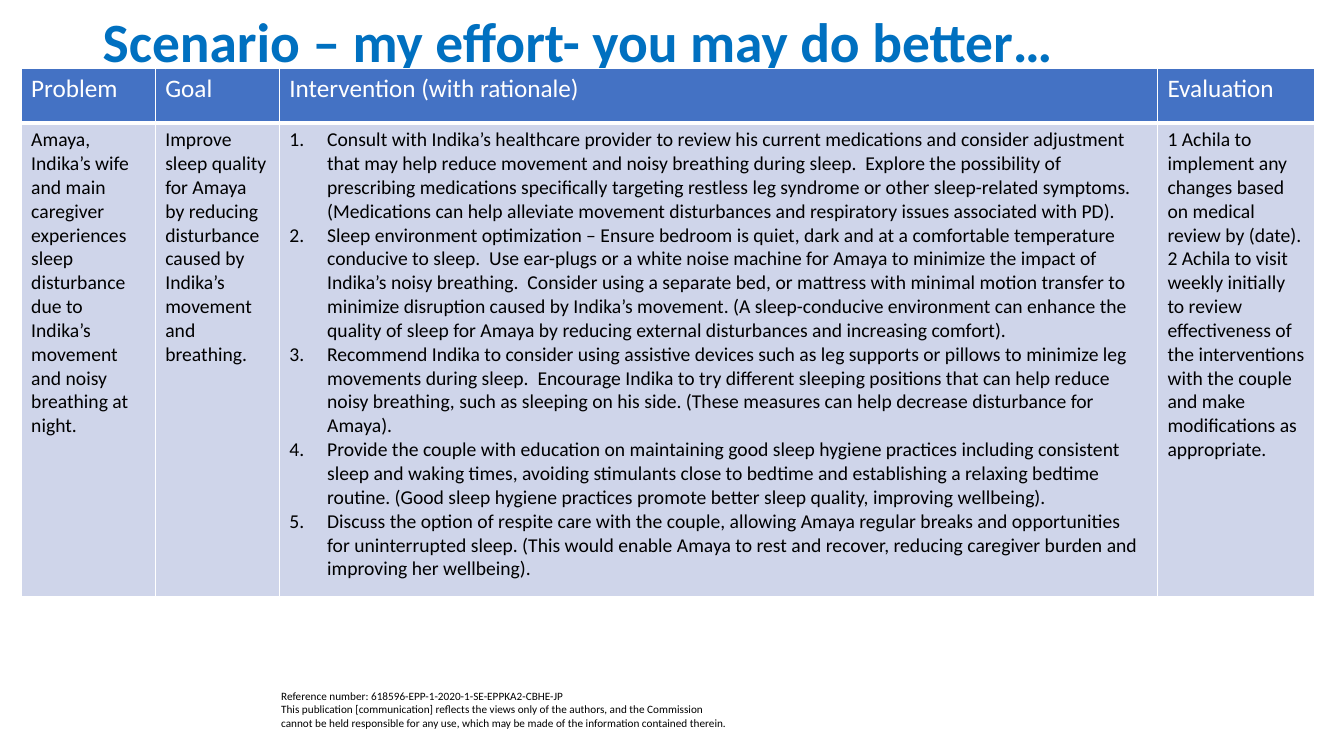
from dataclasses import dataclass

from lxml import etree
from pptx import Presentation
from pptx import util as u
from pptx.dml.color import RGBColor
from pptx.enum import text
from pptx.oxml import ns


@dataclass(frozen=True)
class Theme:
    font: str = "Calibri"
    title: str = "0070C0"
    header_fill: str = "4472C4"
    body_fill: str = "CFD5EA"
    light: str = "FFFFFF"
    dark: str = "000000"
    title_size: float = 39.6
    header_size: float = 18
    body_size: float = 14
    reference_size: float = 8


@dataclass(frozen=True)
class CareColumn:
    heading: str
    width: float
    entries: tuple[str, ...]
    numbered: bool = False


@dataclass(frozen=True)
class TextStyle:
    size: float
    color: str
    bold: bool = False


THEME = Theme()
TITLE_STYLE = TextStyle(THEME.title_size, THEME.title, bold=True)
HEADER_STYLE = TextStyle(THEME.header_size, THEME.light)
BODY_STYLE = TextStyle(THEME.body_size, THEME.dark)
REFERENCE_STYLE = TextStyle(THEME.reference_size, THEME.dark)

HEADER_HEIGHT, BODY_HEIGHT = 0.54, 4.7
NUMBER_INDENT = 0.375

CARE_PLAN = (
    CareColumn("Problem", 1.33, (
        "Amaya, Indika’s wife and main caregiver experiences sleep disturbance due to "
        "Indika’s movement and noisy breathing at night.",
    )),
    CareColumn("Goal", 1.23, (
        "Improve sleep quality for Amaya by reducing disturbance caused by Indika’s "
        "movement and breathing.",
    )),
    CareColumn("Intervention (with rationale)", 8.71, (
        "Consult with Indika’s healthcare provider to review his current medications and "
        "consider adjustment that may help reduce movement and noisy breathing during sleep.  "
        "Explore the possibility of prescribing medications specifically targeting restless "
        "leg syndrome or other sleep-related symptoms. (Medications can help alleviate "
        "movement disturbances and respiratory issues associated with PD).",
        "Sleep environment optimization – Ensure bedroom is quiet, dark and at a comfortable "
        "temperature conducive to sleep.  Use ear-plugs or a white noise machine for Amaya to "
        "minimize the impact of Indika’s noisy breathing.  Consider using a separate bed, or "
        "mattress with minimal motion transfer to minimize disruption caused by Indika’s "
        "movement. (A sleep-conducive environment can enhance the quality of sleep for Amaya "
        "by reducing external disturbances and increasing comfort).",
        "Recommend Indika to consider using assistive devices such as leg supports or pillows "
        "to minimize leg movements during sleep.  Encourage Indika to try different sleeping "
        "positions that can help reduce noisy breathing, such as sleeping on his side. (These "
        "measures can help decrease disturbance for Amaya).",
        "Provide the couple with education on maintaining good sleep hygiene practices "
        "including consistent sleep and waking times, avoiding stimulants close to bedtime "
        "and establishing a relaxing bedtime routine. (Good sleep hygiene practices promote "
        "better sleep quality, improving wellbeing).",
        "Discuss the option of respite care with the couple, allowing Amaya regular breaks and "
        "opportunities for uninterrupted sleep. (This would enable Amaya to rest and recover, "
        "reducing caregiver burden and improving her wellbeing).",
    ), numbered=True),
    CareColumn("Evaluation", 1.56, (
        "1 Achila to implement any changes based on medical review by (date).",
        "2 Achila to visit weekly initially to review effectiveness of the interventions "
        "with the couple and make modifications as appropriate.",
    )),
)

REFERENCE_LINES = (
    "Reference number: 618596-EPP-1-2020-1-SE-EPPKA2-CBHE-JP",
    "This publication [communication] reflects the views only of the authors, and the "
    "Commission cannot be held responsible for any use, which may be made of the "
    "information contained therein.",
)


def add_run(paragraph, wording: str, style: TextStyle) -> None:
    run = paragraph.add_run()
    run.text = wording
    run.font.name = THEME.font
    run.font.size = u.Pt(style.size)
    run.font.bold = style.bold
    run.font.color.rgb = RGBColor.from_string(style.color)


def add_text_frame(slide, left: float, top: float, width: float, height: float):
    frame = slide.shapes.add_textbox(*map(u.Inches, (left, top, width, height))).text_frame
    frame.word_wrap = True
    return frame


def number_paragraph(paragraph) -> None:
    """Give the paragraph automatic numbering with a hanging indent."""
    properties = paragraph._p.get_or_add_pPr()
    properties.set("marL", str(u.Inches(NUMBER_INDENT)))
    properties.set("indent", str(-u.Inches(NUMBER_INDENT)))
    etree.SubElement(properties, ns.qn("a:buFont"), typeface="+mj-lt")
    etree.SubElement(properties, ns.qn("a:buAutoNum"), type="arabicPeriod")


def add_borders(cell, bottom_points: float) -> None:
    properties = cell._tc.get_or_add_tcPr()
    for position, side in enumerate(("lnL", "lnR", "lnT", "lnB")):
        points = bottom_points if side == "lnB" else 1
        border = etree.Element(ns.qn(f"a:{side}"), w=str(u.Pt(points)))
        fill = etree.SubElement(border, ns.qn("a:solidFill"))
        etree.SubElement(fill, ns.qn("a:srgbClr"), val=THEME.light)
        properties.insert(position, border)


def fill_cell(cell, entries: tuple[str, ...], style: TextStyle, fill: str,
              numbered: bool = False, bottom_points: float = 1) -> None:
    cell.fill.solid()
    cell.fill.fore_color.rgb = RGBColor.from_string(fill)
    add_borders(cell, bottom_points)
    frame = cell.text_frame
    for index, entry in enumerate(entries):
        paragraph = frame.add_paragraph() if index else frame.paragraphs[0]
        if numbered:
            number_paragraph(paragraph)
        add_run(paragraph, entry, style)


def add_reference(slide) -> None:
    paragraph = add_text_frame(slide, 2.69, 6.79, 4.64, 0.5).paragraphs[0]
    for index, line in enumerate(REFERENCE_LINES):
        if index:
            paragraph.add_line_break()
        add_run(paragraph, line, REFERENCE_STYLE)


def add_title(slide) -> None:
    frame = add_text_frame(slide, 0.92, 0.19, 11.5, 0.5)
    frame.vertical_anchor = text.MSO_ANCHOR.MIDDLE
    heading = frame.paragraphs[0]
    heading.line_spacing = 0.9
    add_run(heading, "Scenario – my effort- you may do better…", TITLE_STYLE)


def add_care_plan(slide) -> None:
    total_width = sum(column.width for column in CARE_PLAN)
    plan = slide.shapes.add_table(
        2, len(CARE_PLAN), u.Inches(0.21), u.Inches(0.68),
        u.Inches(total_width), u.Inches(HEADER_HEIGHT + BODY_HEIGHT)).table
    for row, height in zip(plan.rows, (HEADER_HEIGHT, BODY_HEIGHT)):
        row.height = u.Inches(height)
    for index, column in enumerate(CARE_PLAN):
        plan.columns[index].width = u.Inches(column.width)
        fill_cell(plan.cell(0, index), (column.heading,), HEADER_STYLE,
                  THEME.header_fill, bottom_points=3)
        fill_cell(plan.cell(1, index), column.entries, BODY_STYLE,
                  THEME.body_fill, column.numbered)


def main() -> None:
    deck = Presentation()
    deck.slide_width, deck.slide_height = u.Inches(13.33), u.Inches(7.5)
    slide = deck.slides.add_slide(deck.slide_layouts[6])
    add_reference(slide)
    add_title(slide)
    add_care_plan(slide)
    deck.save("out.pptx")


if __name__ == "__main__":
    main()
